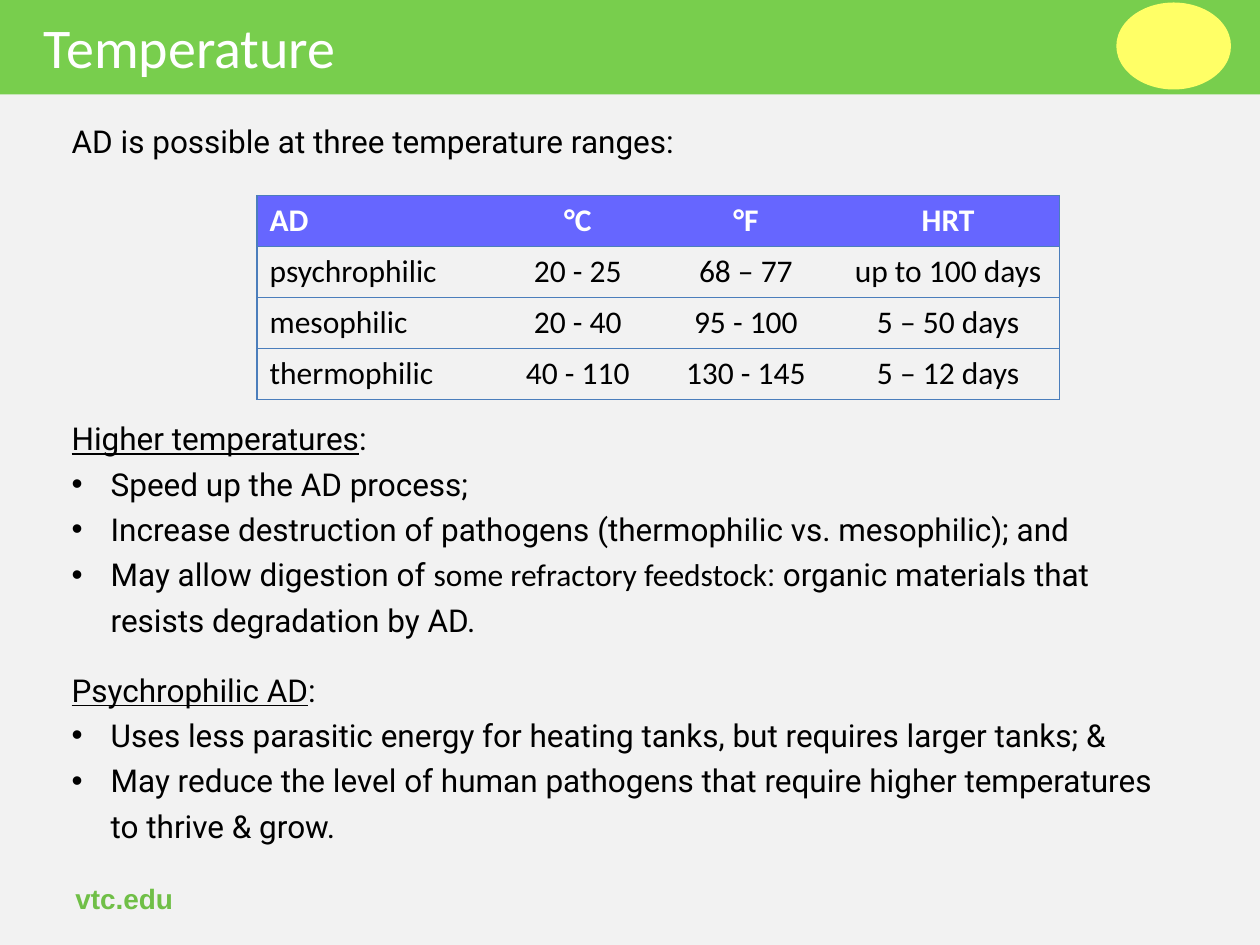
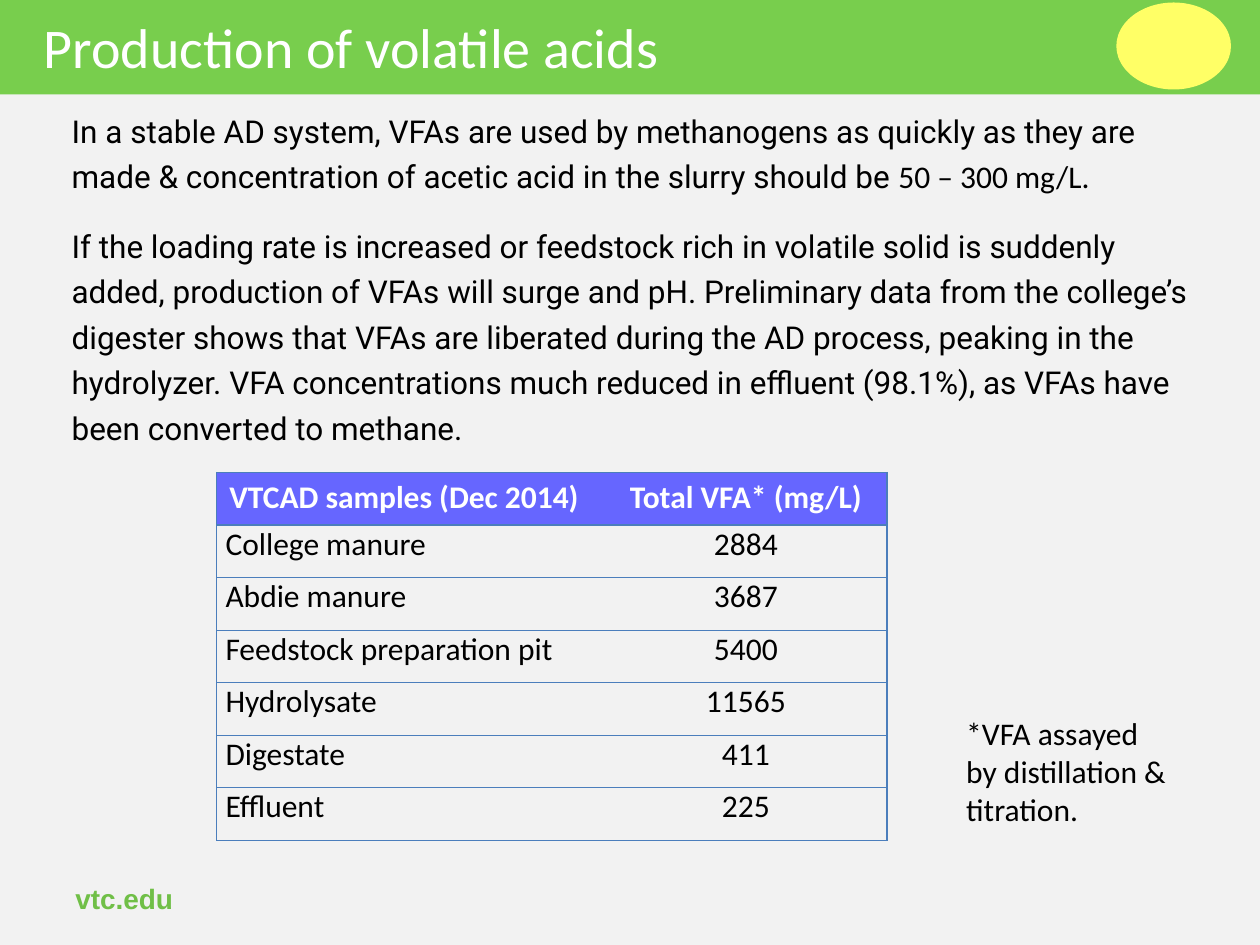
from dataclasses import dataclass

from lxml.etree import SubElement
from pptx import Presentation
from pptx.dml.color import RGBColor
from pptx.enum.shapes import MSO_SHAPE as Preset
from pptx.enum.text import MSO_ANCHOR as Anchor, PP_ALIGN as Align
from pptx.oxml.ns import qn
from pptx.util import Inches, Pt

PAGE_GREY = RGBColor(0xF2, 0xF2, 0xF2)
BAND_GREEN = RGBColor(0x78, 0xCE, 0x4D)
FOOTER_GREEN = RGBColor(0x70, 0xBF, 0x47)
WHITE = RGBColor(0xFF, 0xFF, 0xFF)
BLACK = RGBColor(0x00, 0x00, 0x00)
HEADER_VIOLET = RGBColor(0x66, 0x66, 0xFF)
BORDER_BLUE = RGBColor(0x4B, 0x7E, 0xBC)
OVAL_YELLOW = RGBColor(0xFF, 0xFF, 0x66)

BODY_FONT = "Roboto"
LABEL_FONT = "Calibri"
FOOTER_FONT = "Arial"
BODY_SIZE = 18
LINE_SPACING = 1.2
SECTION_GAP = 14
TABLE_GAP = 144
BULLET_INDENT = Inches(0.31)


@dataclass(frozen=True)
class Box:
    """Place and size in inches."""

    left: float
    top: float
    width: float
    height: float

    def lengths(self) -> tuple:
        """Return the four values as lengths."""
        return tuple(map(Inches, (self.left, self.top, self.width, self.height)))


@dataclass(frozen=True)
class Span:
    """Piece of text with one look."""

    text: str
    font: str = BODY_FONT
    size: float = BODY_SIZE
    color: RGBColor = BLACK
    bold: bool = False
    underline: bool = False


@dataclass(frozen=True)
class Line:
    """Paragraph of body text."""

    spans: tuple
    bullet: bool = False
    gap: float = 0


@dataclass(frozen=True)
class Grid:
    """Table with a header row and evenly high rows."""

    box: Box
    widths: tuple
    rows: tuple
    side_inset: float = 0.1
    top_inset: float = 0.05


def plain(text: str, gap: float = 0) -> Line:
    """Make an unbulleted body paragraph."""
    return Line((Span(text),), gap=gap)


def bullet(text: str) -> Line:
    """Make a bulleted body paragraph."""
    return Line((Span(text),), bullet=True)


def heading(text: str, gap: float) -> Line:
    """Make an underlined heading ending in a colon."""
    return Line((Span(text, underline=True), Span(":")), gap=gap)


def style_run(run, span: Span) -> None:
    """Give one run the look of a span."""
    run.font.name = span.font
    run.font.size = Pt(span.size)
    run.font.color.rgb = span.color
    run.font.bold = span.bold
    run.font.underline = span.underline


def style_runs(paragraph, span: Span) -> None:
    """Give all runs of a paragraph the look of a span."""
    for run in paragraph.runs:
        style_run(run, span)


def add_label(slide, box: Box, span: Span, anchor: Anchor = Anchor.TOP) -> None:
    """Add a one-style text box that does not wrap."""
    frame = slide.shapes.add_textbox(*box.lengths()).text_frame
    frame.word_wrap = False
    frame.vertical_anchor = anchor
    paragraph = frame.paragraphs[0]
    paragraph.text = span.text
    style_runs(paragraph, span)


def add_body(slide, box: Box, lines: tuple) -> None:
    """Add a wrapped text box of body paragraphs."""
    frame = slide.shapes.add_textbox(*box.lengths()).text_frame
    frame.word_wrap = True
    for index, line in enumerate(lines):
        paragraph = frame.add_paragraph() if index else frame.paragraphs[0]
        paragraph.line_spacing = LINE_SPACING
        if line.gap:
            paragraph.space_before = Pt(line.gap)
        if line.bullet:
            properties = paragraph._p.get_or_add_pPr()
            properties.set("marL", str(BULLET_INDENT))
            properties.set("indent", str(-BULLET_INDENT))
            SubElement(properties, qn("a:buFont"), typeface=FOOTER_FONT)
            SubElement(properties, qn("a:buChar"), char="•")
        for span in line.spans:
            run = paragraph.add_run()
            run.text = span.text
            style_run(run, span)


def set_borders(cell, first: bool, last: bool) -> None:
    """Rule a cell above and below, and at the table's outer sides."""
    properties = cell._tc.get_or_add_tcPr()
    for side, visible in (("L", first), ("R", last), ("T", True), ("B", True)):
        edge = SubElement(properties, qn(f"a:ln{side}"), w=str(Pt(0.75)))
        if visible:
            fill = SubElement(edge, qn("a:solidFill"))
            SubElement(fill, qn("a:srgbClr"), val=str(BORDER_BLUE))
        else:
            SubElement(edge, qn("a:noFill"))


def add_grid(slide, grid: Grid) -> None:
    """Add a ruled table with a violet header."""
    last_column = len(grid.widths) - 1
    frame = slide.shapes.add_table(len(grid.rows), len(grid.widths), *grid.box.lengths())
    table = frame.table
    table.horz_banding = False
    for column, width in zip(table.columns, grid.widths):
        column.width = Inches(width)
    for row, texts in enumerate(grid.rows):
        is_header = row == 0
        for column, text in enumerate(texts):
            cell = table.cell(row, column)
            set_borders(cell, column == 0, column == last_column)
            if is_header:
                cell.fill.solid()
                cell.fill.fore_color.rgb = HEADER_VIOLET
            else:
                cell.fill.background()
                cell.margin_left = cell.margin_right = Inches(grid.side_inset)
                cell.margin_top = cell.margin_bottom = Inches(grid.top_inset)
            cell.text_frame.text = text
            paragraph = cell.text_frame.paragraphs[0]
            paragraph.alignment = Align.CENTER if column else Align.LEFT
            color = WHITE if is_header else BLACK
            style_runs(paragraph, Span(text, LABEL_FONT, color=color, bold=is_header))


def add_preset(slide, preset: Preset, box: Box, fill: RGBColor) -> None:
    """Add a filled preset shape with neither outline nor shadow."""
    shape = slide.shapes.add_shape(preset, *box.lengths())
    shape.shadow.inherit = False
    shape.fill.solid()
    shape.fill.fore_color.rgb = fill
    shape.line.fill.background()


def add_slide(presentation, title: str, title_width: float):
    """Add a slide with title band, corner oval and footer."""
    slide = presentation.slides.add_slide(presentation.slide_layouts[6])
    add_label(slide, Box(0.5, 6.93, 2.33, 0.4),
              Span("vtc.edu", FOOTER_FONT, 16, FOOTER_GREEN, bold=True), Anchor.MIDDLE)
    add_preset(slide, Preset.RECTANGLE, Box(0, 0, 10, 0.75), BAND_GREEN)
    add_label(slide, Box(0.25, 0.05, title_width, 0.64), Span(title, LABEL_FONT, 32, WHITE))
    add_preset(slide, Preset.OVAL, Box(8.86, 0.02, 0.91, 0.69), OVAL_YELLOW)
    return slide


def build_temperature(presentation) -> None:
    """Build the slide on temperature ranges."""
    slide = add_slide(presentation, "Temperature", 2.87)
    add_body(slide, Box(0.47, 0.86, 8.92, 5.95), (
        plain("AD is possible at three temperature ranges:"),
        heading("Higher temperatures", TABLE_GAP),
        bullet("Speed up the AD process;"),
        bullet("Increase destruction of pathogens (thermophilic vs. mesophilic); and"),
        Line((Span("May allow digestion of "),
              Span("some refractory feedstock", LABEL_FONT),
              Span(": organic materials that resists degradation by AD.")), bullet=True),
        heading("Psychrophilic AD", SECTION_GAP),
        bullet("Uses less parasitic energy for heating tanks, but requires larger tanks; &"),
        bullet("May reduce the level of human pathogens that require higher "
               "temperatures to thrive & grow."),
    ))
    add_grid(slide, Grid(Box(2.04, 1.55, 6.37, 1.62), (1.93, 1.23, 1.44, 1.77), (
        ("AD", "°C", "°F", "HRT"),
        ("psychrophilic", "20 - 25", "68 – 77", "up to 100 days"),
        ("mesophilic", "20 - 40", "95 - 100", "5 – 50 days"),
        ("thermophilic", "40 - 110", "130 - 145", "5 – 12 days"),
    )))


def build_volatile_acids(presentation) -> None:
    """Build the slide on volatile acids."""
    slide = add_slide(presentation, "Production of volatile acids", 5.91)
    add_body(slide, Box(0.47, 0.78, 9.08, 2.84), (
        Line((Span("In a stable AD system, VFAs are used by methanogens as quickly as they "
                   "are made & concentration of acetic acid in the slurry should be "),
              Span("50 – 300 mg/L.", LABEL_FONT))),
        plain("If the loading rate is increased or feedstock rich in volatile solid is "
              "suddenly added, production of VFAs will surge and pH. Preliminary data from "
              "the college’s digester shows that VFAs are liberated during the AD process, "
              "peaking in the hydrolyzer. VFA concentrations much reduced in effluent "
              "(98.1%), as VFAs have been converted to methane.", SECTION_GAP),
    ))
    add_grid(slide, Grid(Box(1.72, 3.75, 5.32, 2.92), (3.08, 2.24), (
        ("VTCAD samples (Dec 2014)", "Total VFA* (mg/L)"),
        ("College manure", "2884"),
        ("Abdie manure", "3687"),
        ("Feedstock preparation pit", "5400"),
        ("Hydrolysate", "11565"),
        ("Digestate", "411"),
        ("Effluent", "225"),
    ), side_inset=0.07, top_inset=0))
    add_label(slide, Box(7.57, 5.62, 1.81, 1.01),
              Span("*VFA assayed\nby distillation &\ntitration.", LABEL_FONT))


def main() -> None:
    """Build and save the presentation."""
    presentation = Presentation()
    presentation.slide_width = Inches(10)
    presentation.slide_height = Inches(7.5)
    background = presentation.slide_master.background.fill
    background.solid()
    background.fore_color.rgb = PAGE_GREY
    build_temperature(presentation)
    build_volatile_acids(presentation)
    presentation.save("out.pptx")


if __name__ == "__main__":
    main()
